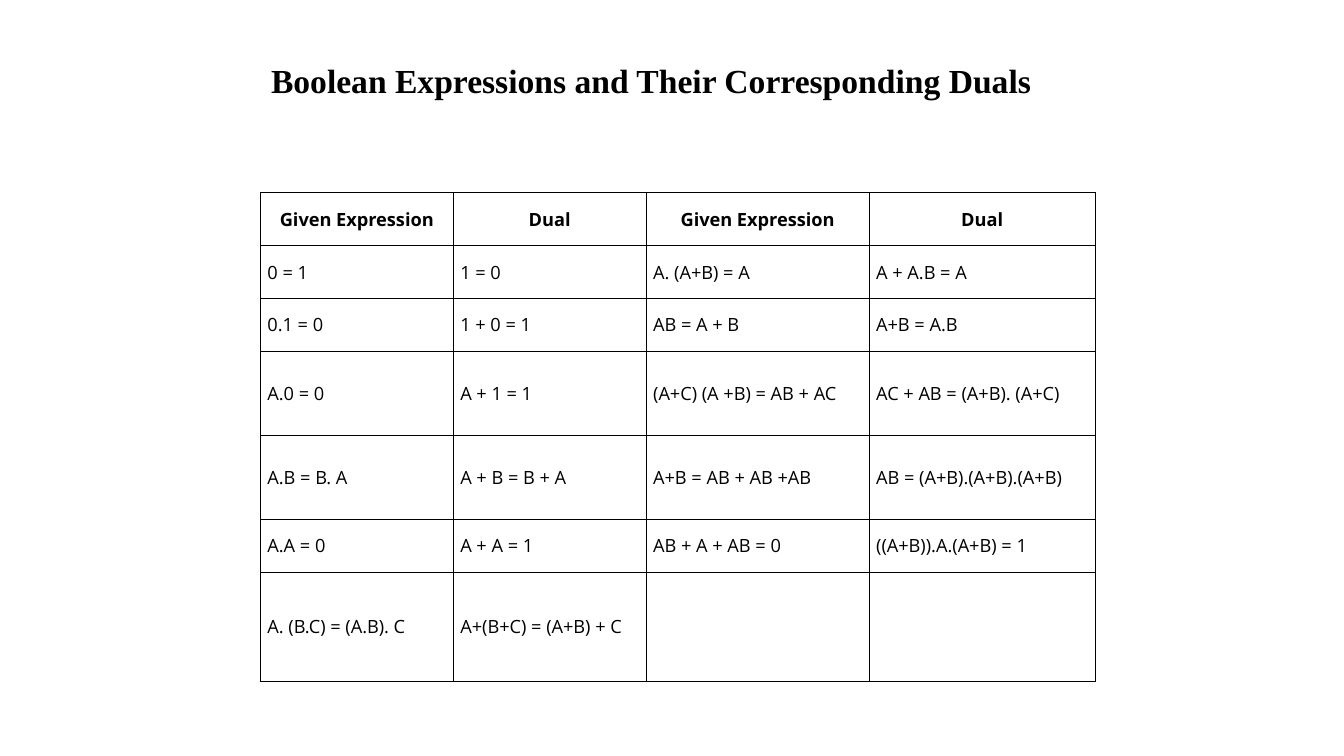
"""Build a slide with a table of Boolean expressions and their duals."""
from lxml.etree import SubElement
from pptx import Presentation
from pptx.dml.color import RGBColor
from pptx.enum.text import MSO_ANCHOR, MSO_AUTO_SIZE, PP_ALIGN
from pptx.oxml.ns import qn
from pptx.util import Cm, Pt

TITLE = "Boolean Expressions and Their Corresponding Duals"
COLUMN_WIDTHS = [4.86, 4.86, 5.62, 5.7]
ROW_HEIGHTS = [1.33, 1.33, 1.33, 2.12, 2.12, 1.33, 2.75]
EXPRESSIONS = [
    ["Given Expression", "Dual", "Given Expression", "Dual"],
    ["0 = 1", "1 = 0", "A. (A+B) = A", "A + A.B = A"],
    ["0.1 = 0", "1 + 0 = 1", "AB = A + B", "A+B = A.B"],
    ["A.0 = 0", "A + 1 = 1", "(A+C) (A +B) = AB + AC", "AC + AB = (A+B). (A+C)"],
    ["A.B = B. A", "A + B = B + A", "A+B = AB + AB +AB", "AB = (A+B).(A+B).(A+B)"],
    ["A.A = 0", "A + A = 1", "AB + A + AB = 0", "((A+B)).A.(A+B) = 1"],
    ["A. (B.C) = (A.B). C", "A+(B+C) = (A+B) + C", "", ""],
]


def color(value):
    return RGBColor.from_string(value)


class SlideBuilder:
    ink = "000000"
    paper = "FFFFFF"
    title_font = "Times New Roman"
    body_font = "Open Sans"
    cell_margin = Cm(0.18)

    def __init__(self, presentation):
        self.slide = presentation.slides.add_slide(presentation.slide_layouts[5])

    def add_run(self, paragraph, text, font, size, bold):
        run = paragraph.add_run()
        run.text = text
        run.font.name = font
        run.font.size = Pt(size)
        run.font.bold = bold
        run.font.color.rgb = color(self.ink)

    def title(self, text, left, top, width, height):
        shape = self.slide.shapes.title
        shape.left, shape.top = Cm(left), Cm(top)
        shape.width, shape.height = Cm(width), Cm(height)
        shape.fill.solid()
        shape.fill.fore_color.rgb = color(self.paper)
        frame = shape.text_frame
        frame.word_wrap = True
        frame.auto_size = MSO_AUTO_SIZE.NONE
        frame.vertical_anchor = MSO_ANCHOR.TOP
        frame.margin_left = frame.margin_right = Cm(0.25)
        frame.margin_top = frame.margin_bottom = 0
        paragraph = frame.paragraphs[0]
        paragraph.alignment = PP_ALIGN.LEFT
        paragraph.line_spacing = 1.0
        paragraph.space_before = Pt(0)
        self.add_run(paragraph, text, self.title_font, 24, True)

    def borders(self, cell):
        properties = cell._tc.get_or_add_tcPr()
        for side in ("a:lnL", "a:lnR", "a:lnT", "a:lnB"):
            line = SubElement(properties, qn(side), w=str(Pt(0.75)))
            fill = SubElement(line, qn("a:solidFill"))
            SubElement(fill, qn("a:srgbClr"), val=self.ink)

    def cell(self, cell, text, is_header):
        self.borders(cell)
        cell.fill.background()
        cell.vertical_anchor = MSO_ANCHOR.MIDDLE
        cell.margin_left = cell.margin_right = self.cell_margin
        cell.margin_top = cell.margin_bottom = self.cell_margin
        if text:
            paragraph = cell.text_frame.paragraphs[0]
            paragraph.alignment = PP_ALIGN.CENTER if is_header else PP_ALIGN.LEFT
            self.add_run(paragraph, text, self.body_font, 13, is_header)

    def table(self, rows, left, top, widths, heights):
        table = self.slide.shapes.add_table(
            len(rows), len(widths), Cm(left), Cm(top),
            Cm(sum(widths)), Cm(sum(heights))).table
        table.horz_banding = False
        for column, width in zip(table.columns, widths):
            column.width = Cm(width)
        for row, height in zip(table.rows, heights):
            row.height = Cm(height)
        for row_index, texts in enumerate(rows):
            for column_index, text in enumerate(texts):
                self.cell(table.cell(row_index, column_index), text, row_index == 0)


def main():
    presentation = Presentation()
    presentation.slide_width, presentation.slide_height = Cm(33.87), Cm(19.05)
    builder = SlideBuilder(presentation)
    builder.title(TITLE, 6.58, 1.52, 21.21, 2.16)
    builder.table(EXPRESSIONS, 6.56, 4.86, COLUMN_WIDTHS, ROW_HEIGHTS)
    presentation.save("out.pptx")


if __name__ == "__main__":
    main()
